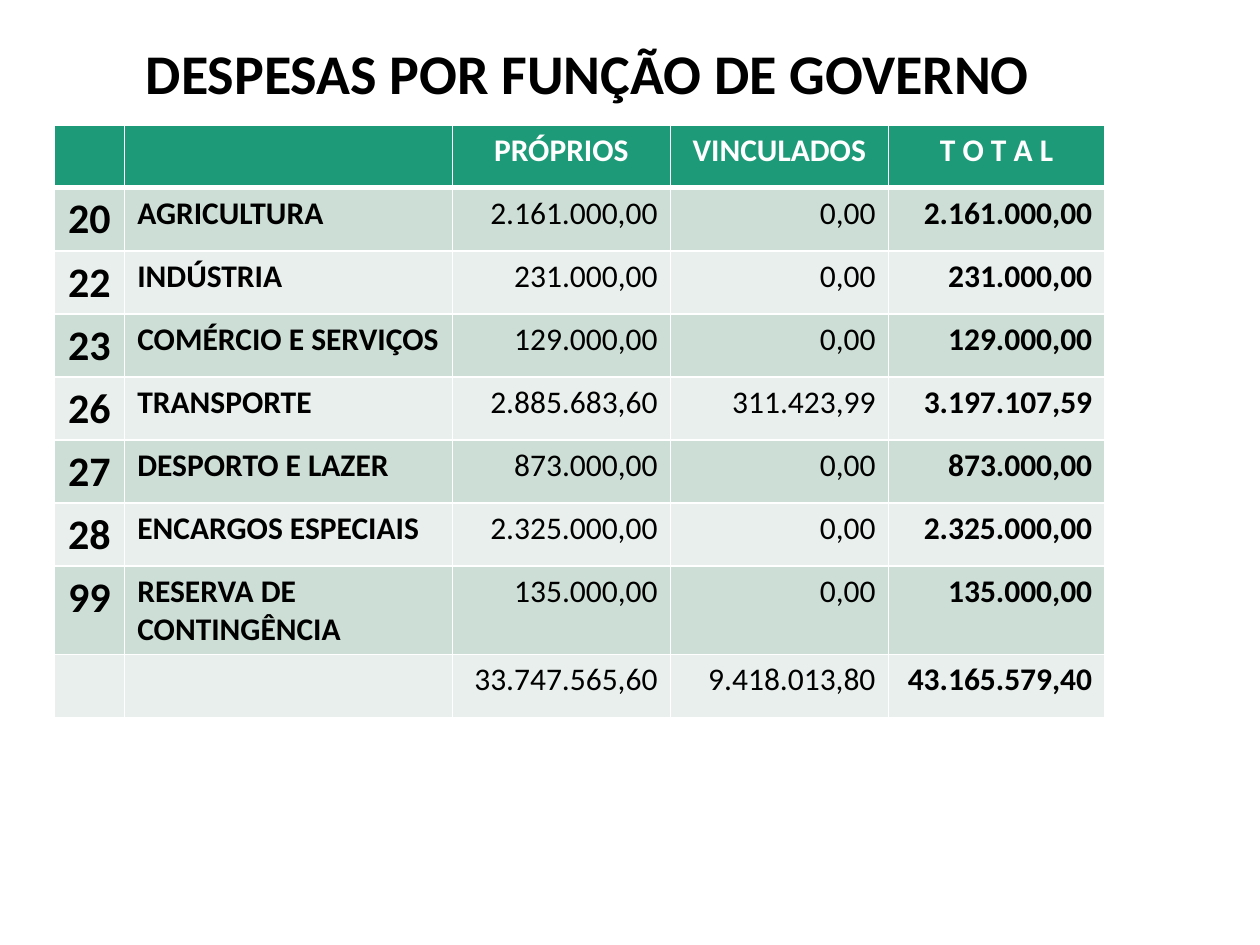
"""Build the slide of government spending by function."""
from lxml.etree import SubElement as Sub
from pptx import Presentation
from pptx.dml.color import RGBColor
from pptx.enum.text import MSO_ANCHOR as Anchor, PP_ALIGN as Align
from pptx.oxml.ns import qn
from pptx.util import Inches, Pt


def put(frame, text, size=18, bold=True, color="000000", align=Align.LEFT):
    """Write text into a frame, or size its empty line."""
    par = frame.paragraphs[0]
    par.alignment = align
    if not text:
        Sub(par._p, qn("a:endParaRPr"), sz=str(size * 100))
        return
    run = par.add_run()
    run.text = text
    font = run.font
    font.name, font.size, font.bold = "Calibri", Pt(size), bold
    font.color.rgb = RGBColor.from_string(color)


def dress(cell, fill, top=1, bottom=1):
    """Give a cell its white borders and its fill."""
    props = cell._tc.get_or_add_tcPr()
    for side, width in zip("LRTB", (1, 1, top, bottom)):
        line = Sub(props, qn(f"a:ln{side}"), w=str(Pt(width)))
        Sub(Sub(line, qn("a:solidFill")), qn("a:srgbClr"), val="FFFFFF")
    cell.fill.solid()
    cell.fill.fore_color.rgb = RGBColor.from_string(fill)


rows = [
    ("", "", "PRÓPRIOS", "VINCULADOS", "T O T A L"),
    ("20", "AGRICULTURA", "2.161.000,00", "0,00", "2.161.000,00"),
    ("22", "INDÚSTRIA", "231.000,00", "0,00", "231.000,00"),
    ("23", "COMÉRCIO E SERVIÇOS", "129.000,00", "0,00", "129.000,00"),
    ("26", "TRANSPORTE", "2.885.683,60", "311.423,99", "3.197.107,59"),
    ("27", "DESPORTO E LAZER", "873.000,00", "0,00", "873.000,00"),
    ("28", "ENCARGOS ESPECIAIS", "2.325.000,00", "0,00", "2.325.000,00"),
    ("99", "RESERVA DE CONTINGÊNCIA", "135.000,00", "0,00", "135.000,00"),
    ("", "", "33.747.565,60", "9.418.013,80", "43.165.579,40"),
]
widths = (0.56, 2.6, 1.73, 1.73, 1.72)
sizes = (24, 18, 18, 18, 18)
bolds = (True, True, False, False, True)
aligns = (Align.CENTER, Align.LEFT, Align.RIGHT, Align.RIGHT, Align.RIGHT)

deck = Presentation()
deck.slide_width, deck.slide_height = Inches(10), Inches(7.5)
slide = deck.slides.add_slide(deck.slide_layouts[6])

title = slide.shapes.add_textbox(
    Inches(0.5), Inches(0.3), Inches(8.33), Inches(0.61)).text_frame
title.word_wrap = True
title.vertical_anchor = Anchor.MIDDLE
title.paragraphs[0].line_spacing = 0.9
put(title, "DESPESAS POR FUNÇÃO DE GOVERNO", size=32, align=Align.CENTER)

table = slide.shapes.add_table(
    len(rows), len(widths), Inches(0.43), Inches(0.99),
    Inches(8.33), Inches(0.41 * len(rows))).table
for col, width in zip(table.columns, widths):
    col.width = Inches(width)

for r, row in enumerate(rows):
    table.rows[r].height = Inches(0.41)
    for c, text in enumerate(row):
        cell = table.cell(r, c)
        if r == 0:
            dress(cell, "1D9A78", bottom=3)
            put(cell.text_frame, text, size=sizes[c], color="FFFFFF",
                align=Align.CENTER)
        else:
            dress(cell, "CDDED6" if r % 2 else "E8EFEC", top=3 if r == 1 else 1)
            put(cell.text_frame, text, size=sizes[c], bold=bolds[c],
                align=aligns[c])

deck.save("out.pptx")
